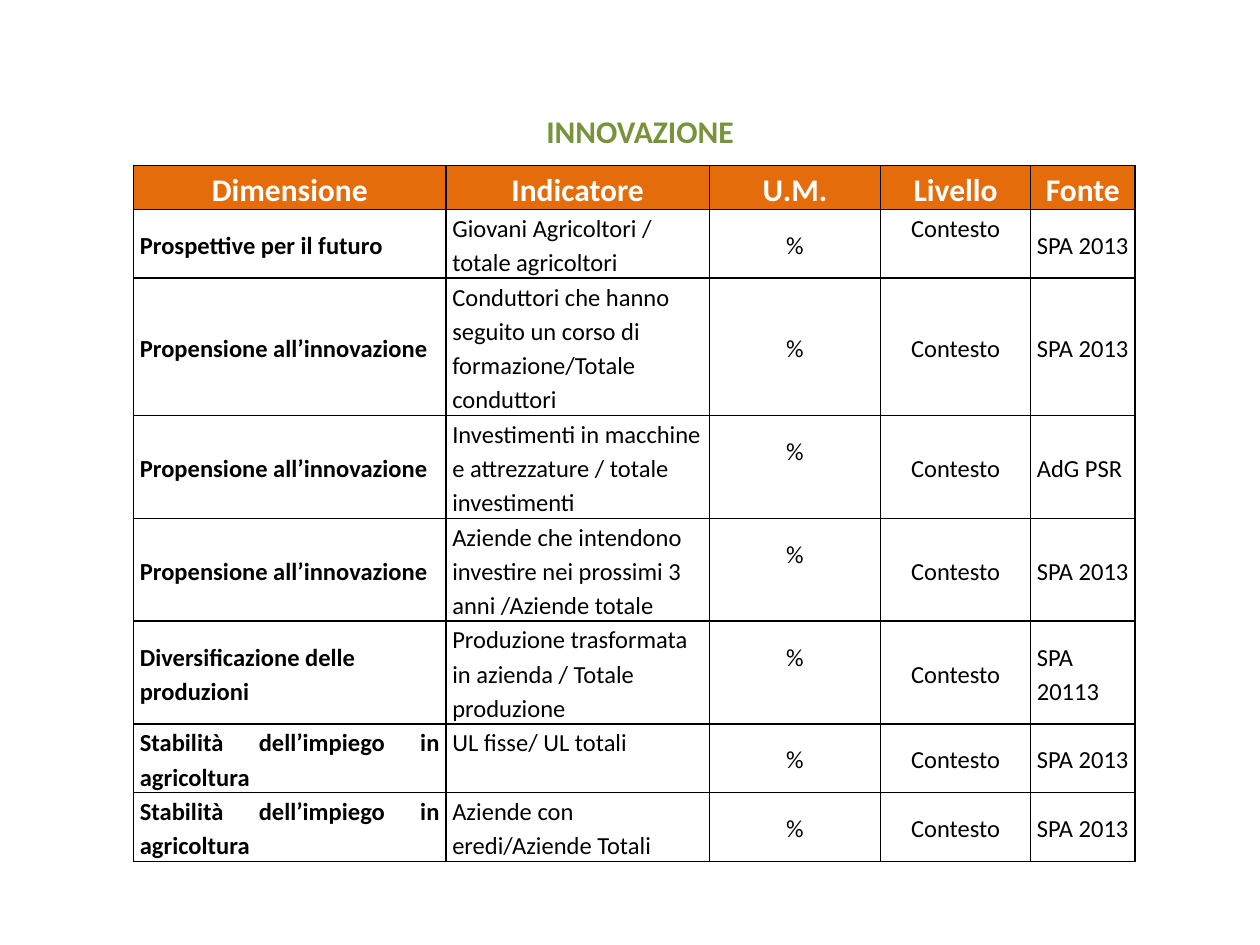
from lxml import etree
from pptx import Presentation, util as u
from pptx.dml.color import RGBColor
from pptx.enum import text as t
from pptx.oxml.ns import qn

MID, TOP = t.MSO_ANCHOR.MIDDLE, t.MSO_ANCHOR.TOP
LEFT, MIDDLE, JUST = t.PP_ALIGN.LEFT, t.PP_ALIGN.CENTER, t.PP_ALIGN.JUSTIFY
LINE = 0.27  # height of one line of table text, inches


def color(code):
    return RGBColor.from_string(code)


def write(frame, words, size=14, ink="000000", bold=False, align=LEFT, lead=None):
    frame.word_wrap = True
    para = frame.paragraphs[0]
    para.alignment = align
    if lead:
        para.line_spacing = lead
    run = para.add_run()
    run.text = words
    font = run.font
    font.name, font.size, font.bold = "Calibri", u.Pt(size), bold
    font.color.rgb = color(ink)


class Deck:
    green, orange, white, black = "77933C", "E46C0A", "FFFFFF", "000000"

    def __init__(self, wide, high):
        self.prs = Presentation()
        self.prs.slide_width, self.prs.slide_height = u.Inches(wide), u.Inches(high)
        self.slide = self.prs.slides.add_slide(self.prs.slide_layouts[6])

    def place(self, x, y, w, h):
        """Turn shares of the slide into lengths."""
        wide, high = self.prs.slide_width, self.prs.slide_height
        return int(x * wide), int(y * high), int(w * wide), int(h * high)

    def title(self, words, *box):
        shape = self.slide.shapes.add_textbox(*self.place(*box))
        write(shape.text_frame, words, size=18, ink=self.green, bold=True, align=MIDDLE)

    def border(self, cell):
        props = cell._tc.get_or_add_tcPr()
        for at, side in enumerate(("lnL", "lnR", "lnT", "lnB")):
            line = etree.Element(qn("a:" + side), w=str(u.Pt(1)))
            fill = etree.SubElement(line, qn("a:solidFill"))
            etree.SubElement(fill, qn("a:srgbClr"), val=self.black)
            props.insert(at, line)

    def cell(self, cell, words, anchor=MID, fill=None, lift=0, **form):
        cell.margin_left = cell.margin_right = u.Inches(0.05)
        cell.margin_top, cell.margin_bottom = 0, u.Inches(lift)
        cell.vertical_anchor = anchor
        if fill:
            cell.fill.solid()
            cell.fill.fore_color.rgb = color(fill)
        else:
            cell.fill.background()
        self.border(cell)
        write(cell.text_frame, words, lead=1.15, **form)

    def table(self, x, y, cols, rows):
        left, top, _, _ = self.place(x, y, 0, 0)
        frame = self.slide.shapes.add_table(
            len(rows), len(cols), left, top, u.Inches(sum(cols)), u.Inches(sum(rows)))
        grid = frame.table
        grid.first_row = grid.horz_banding = False
        for col, wide in zip(grid.columns, cols):
            col.width = u.Inches(wide)
        for row, high in zip(grid.rows, rows):
            row.height = u.Inches(high)
        return grid


HEADS = ["Dimensione", "Indicatore", "U.M.", "Livello", "Fonte"]

# Dimension, indicator, source, lines in the row
ITEMS = [
    ("Prospettive per il futuro", "Giovani Agricoltori / totale agricoltori", "SPA 2013", 2),
    ("Propensione all’innovazione",
     "Conduttori che hanno seguito un corso di formazione/Totale conduttori", "SPA 2013", 4),
    ("Propensione all’innovazione",
     "Investimenti in macchine e attrezzature / totale investimenti", "AdG PSR", 3),
    ("Propensione all’innovazione",
     "Aziende che intendono investire nei prossimi 3 anni /Aziende totale", "SPA 2013", 3),
    ("Diversificazione delle produzioni",
     "Produzione trasformata in azienda / Totale produzione", "SPA 20113", 3),
    ("Stabilità dell’impiego in agricoltura", "UL fisse/ UL totali", "SPA 2013", 2),
    ("Stabilità dell’impiego in agricoltura", "Aziende con eredi/Aziende Totali", "SPA 2013", 2),
]


def main():
    deck = Deck(10, 7.5)

    # Table grid: row heights follow the number of lines
    rows = [0.34] + [LINE * item[3] for item in ITEMS]
    grid = deck.table(0.106, 0.175, [2.48, 2.09, 1.36, 1.19, 0.83], rows)

    # Header row
    for col, head in enumerate(HEADS):
        deck.cell(grid.cell(0, col), head, fill=deck.orange, size=18,
                  ink=deck.white, bold=True, align=MIDDLE)

    # Indicator rows; three-line rows raise the unit by half a line
    for row, (theme, sign, source, lines) in enumerate(ITEMS, 1):
        side = LEFT if theme.startswith("Diversificazione") else JUST
        deck.cell(grid.cell(row, 0), theme, bold=True, align=side)
        deck.cell(grid.cell(row, 1), sign, anchor=TOP)
        deck.cell(grid.cell(row, 2), "%", align=MIDDLE, lift=LINE if lines == 3 else 0)
        deck.cell(grid.cell(row, 3), "Contesto", align=MIDDLE,
                  anchor=TOP if row == 1 else MID)
        deck.cell(grid.cell(row, 4), source, align=JUST)

    # Title
    deck.title("INNOVAZIONE", 0.256, 0.112, 0.504, 0.053)
    deck.prs.save("out.pptx")


if __name__ == "__main__":
    main()
